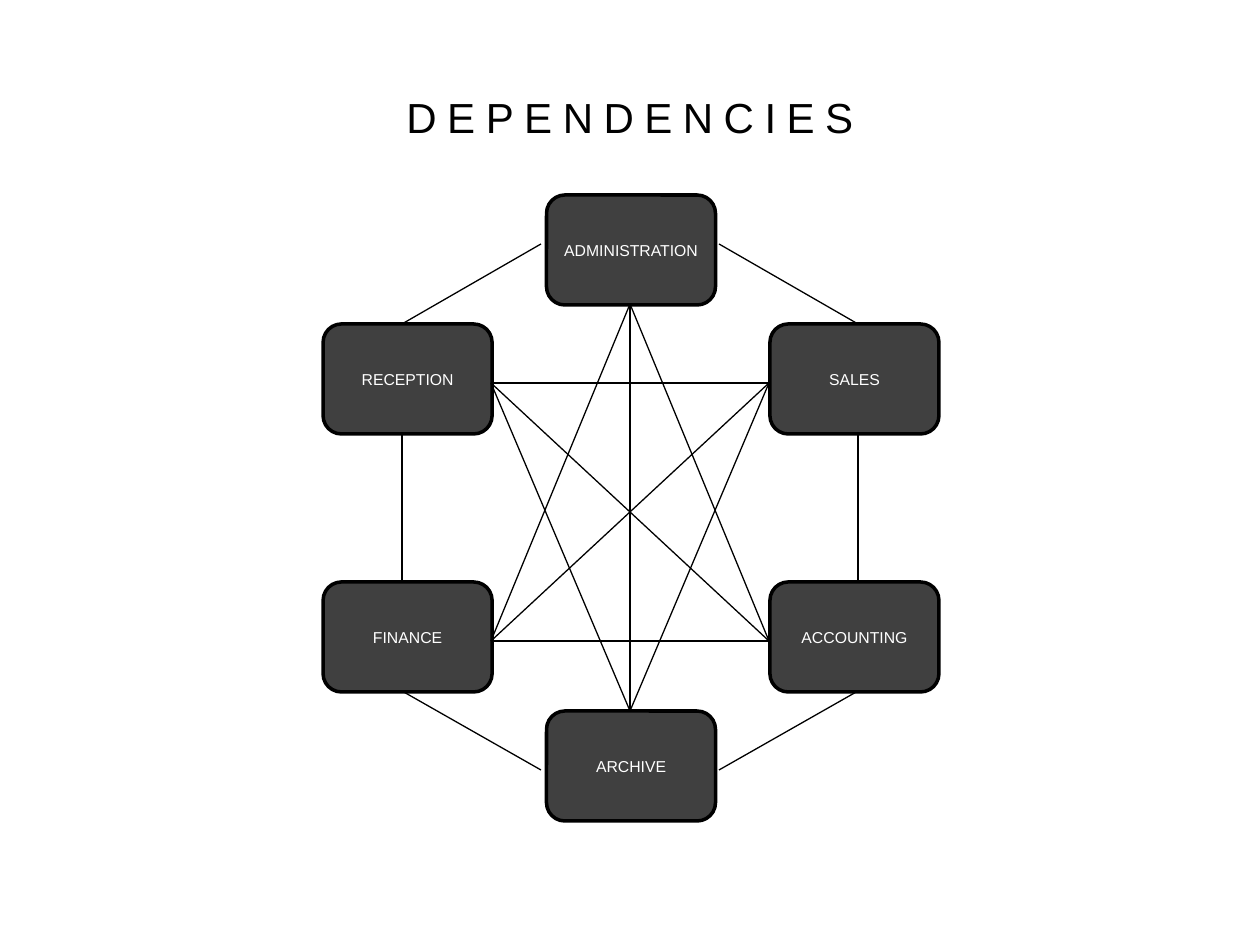
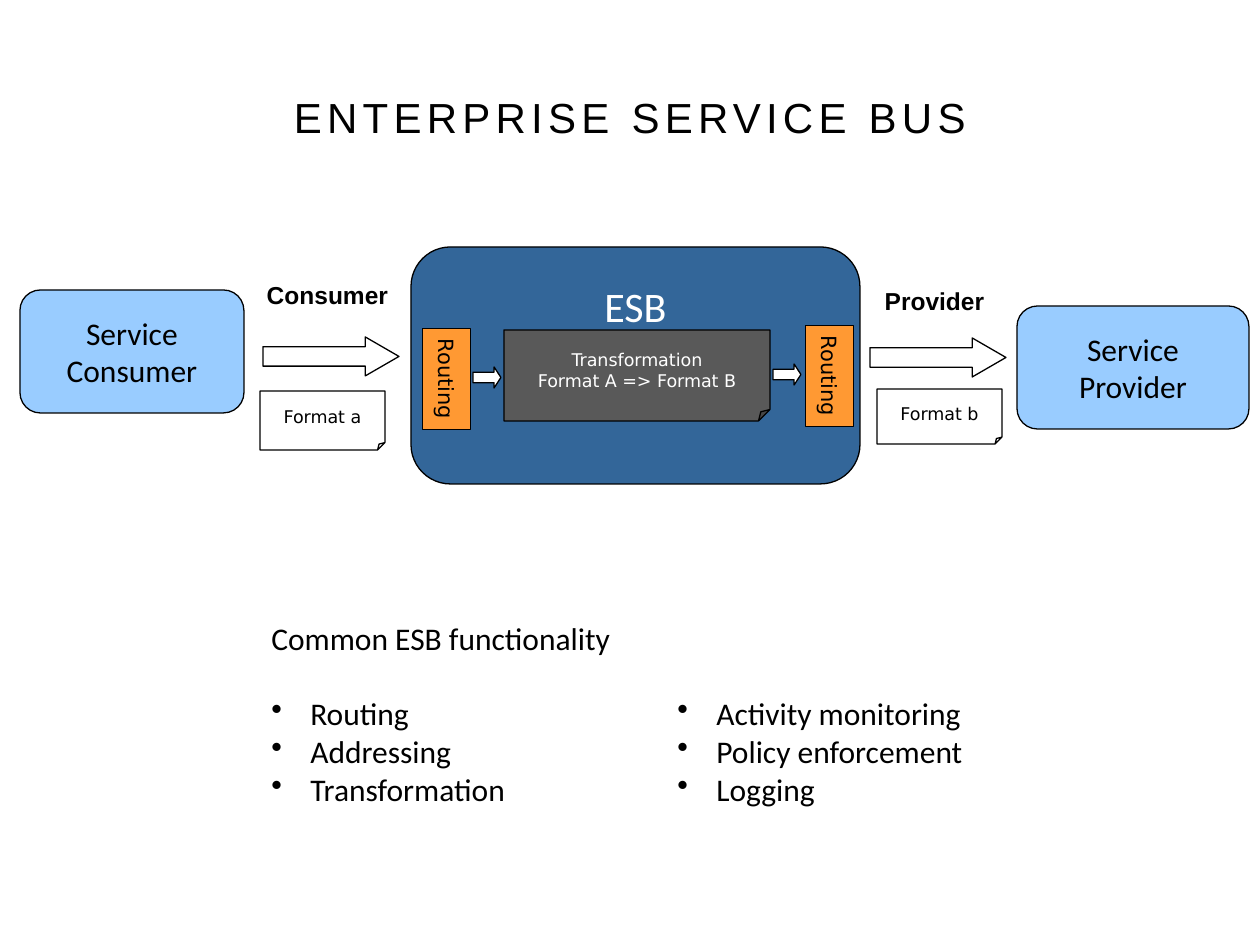
from dataclasses import dataclass
from itertools import combinations
from math import cos, pi, sin

from lxml import etree
from pptx import Presentation, util as u
from pptx.dml.color import RGBColor
from pptx.enum import shapes, text
from pptx.oxml.ns import qn

# ---- Content ----
DEPARTMENTS = ["ADMINISTRATION", "SALES", "ACCOUNTING", "ARCHIVE", "FINANCE", "RECEPTION"]

# Frames are left, top, width, height in px.
SERVICES = [("Service Consumer", (20, 290, 224, 123)), ("Service Provider", (1017, 306, 232, 123))]
MESSAGES = [("Format a", (260, 391, 125, 59)), ("Format b", (877, 389, 125, 55))]
ROLES = [("Consumer", (242, 274, 171, 42)), ("Provider", (849, 280, 171, 42))]
MESSAGE_ARROWS = [(263, 337, 136, 39), (870, 338, 136, 39)]
BUS = ("ESB", (411, 247, 449, 237))
TRANSFORMATION = ("Transformation\nFormat A => Format B", (504, 330, 266, 91))
ROUTERS = [("Routing", (396, 355, 101, 48)), ("Routing", (779, 352, 101, 48))]
ROUTING_ARROWS = [(473, 367, 28, 21), (773, 364, 28, 21)]
FUNCTIONS_HEADING = "Common ESB functionality"
FUNCTIONS = [
    ["Routing", "Addressing", "Transformation"],
    ["Activity monitoring", "Policy enforcement", "Logging"],
]


# ---- Theme ----
@dataclass(frozen=True)
class Style:
    font: str
    size: int
    color: str = "000000"
    bold: bool = False


class Theme:
    black, white = "000000", "FFFFFF"
    department, service, bus = "404040", "99CCFF", "336699"
    transformation, router = "595959", "FF9933"
    hairline, department_line = 0.75, 2
    title = Style("Arial", 24)
    department_text = Style("Arial", 9, white)
    service_text = Style("Calibri", 18)
    bus_text = Style("Calibri", 24, white)
    role_text = Style("Arial", 14, bold=True)
    message_text = Style("DejaVu Sans", 10)
    transformation_text = Style("DejaVu Sans", 10, white)
    router_text = Style("DejaVu Sans", 12)


SLIDE_SIZE = (1260, 945)
TITLE_FRAME = (63, 38, 1134, 157)
KIND = shapes.MSO_SHAPE


def px(length):
    return u.Emu(round(length * 914400 / 126))


def rgb(color):
    return RGBColor.from_string(color)


def write(shape, words, style, align=text.PP_ALIGN.CENTER,
          anchor=text.MSO_ANCHOR.MIDDLE, wrap=True):
    frame = shape.text_frame
    frame.word_wrap = wrap
    frame.vertical_anchor = anchor
    frame.text = words
    for paragraph in frame.paragraphs:
        paragraph.alignment = align
        font = paragraph.font
        font.name, font.size, font.bold = style.font, u.Pt(style.size), style.bold
        font.color.rgb = rgb(style.color)
    return frame


def add_block(slide, kind, frame, fill=None, line_width=Theme.hairline):
    block = slide.shapes.add_shape(kind, *map(px, frame))
    block.shadow.inherit = False
    if fill:
        block.fill.solid()
        block.fill.fore_color.rgb = rgb(fill)
    else:
        block.fill.background()
    block.line.color.rgb = rgb(Theme.black)
    block.line.width = u.Pt(line_width)
    return block


def add_label(slide, frame, words, style, **layout):
    label = slide.shapes.add_textbox(*map(px, frame))
    return write(label, words, style, **layout)


def add_arrow(slide, frame, head):
    arrow = add_block(slide, KIND.RIGHT_ARROW, frame, Theme.white)
    arrow.adjustments[1] = head


def add_note(slide, frame, words, style, fill=None):
    """Add a sheet whose folded corner is an eighth of its short side."""
    note = add_block(slide, KIND.FOLDED_CORNER, frame, fill)
    guides = note._element.spPr.find(qn("a:prstGeom")).find(qn("a:avLst"))
    etree.SubElement(guides, qn("a:gd"), name="adj", fmla="val 12500")
    write(note, words, style, wrap=False)


def add_link(slide, start, end):
    link = slide.shapes.add_connector(
        shapes.MSO_CONNECTOR.STRAIGHT, *map(px, (*start, *end)))
    link.line.color.rgb = rgb(Theme.black)
    link.line.width = u.Pt(Theme.hairline)
    etree.SubElement(link._element.spPr, qn("a:effectLst"))


def add_bullets(frame, indent):
    for paragraph in frame.paragraphs:
        properties = paragraph._p.get_or_add_pPr()
        properties.set("marL", str(px(indent)))
        properties.set("indent", str(-px(indent)))
        bullet = etree.Element(qn("a:buChar"), char="•")
        properties.find(qn("a:defRPr")).addprevious(bullet)


def add_titled_slide(deck, title, spacing):
    """Add a blank slide with a centred title, its letters spaced by points."""
    slide = deck.slides.add_slide(deck.slide_layouts[6])
    frame = add_label(slide, TITLE_FRAME, title, Theme.title)
    frame.paragraphs[0].runs[0]._r.get_or_add_rPr().set("spc", str(spacing * 100))
    return slide


def build_dependencies(deck):
    slide = add_titled_slide(deck, "DEPENDENCIES", 6)
    center_x, center_y, radius = 631, 508, 258
    width, height = 169, 110
    count = len(DEPARTMENTS)
    for i, department in enumerate(DEPARTMENTS):
        angle = 2 * pi * i / count
        x = center_x + radius * sin(angle)
        y = center_y - radius * cos(angle)
        box = add_block(slide, KIND.ROUNDED_RECTANGLE,
                        (x - width / 2, y - height / 2, width, height),
                        Theme.department, Theme.department_line)
        frame = write(box, department, Theme.department_text)
        frame.margin_left = frame.margin_right = px(5)

    # Departments that are not neighbours meet across the ring.
    axis, reach = 630, 139
    left, right = axis - reach, axis + reach
    inner = [(axis, 304), (right, 383), (right, 641), (axis, 711), (left, 641), (left, 383)]
    for a, b in combinations(range(count), 2):
        if b - a not in (1, count - 1):
            add_link(slide, inner[a], inner[b])

    # Neighbours meet along the rim, mirrored about the axis.
    for side in (-1, 1):
        near, far = axis + side * 89, axis + side * 228
        add_link(slide, (near, 244), (far, 324))
        add_link(slide, (far, 433), (far, 582))
        add_link(slide, (near, 770), (far, 691))

    # The two horizontal spans already belong to the inner links.


def build_service_bus(deck):
    slide = add_titled_slide(deck, "ENTERPRISE SERVICE BUS", 3)
    for service, frame in SERVICES:
        box = add_block(slide, KIND.ROUNDED_RECTANGLE, frame, Theme.service)
        write(box, service, Theme.service_text)
    for message, frame in MESSAGES:
        add_note(slide, frame, message, Theme.message_text)
    for role, frame in ROLES:
        add_label(slide, frame, role, Theme.role_text)
    for frame in MESSAGE_ARROWS:
        add_arrow(slide, frame, 0.865)

    name, frame = BUS
    bus = add_block(slide, KIND.ROUNDED_RECTANGLE, frame, Theme.bus)
    write(bus, name, Theme.bus_text, anchor=text.MSO_ANCHOR.TOP).margin_top = px(22)
    steps, frame = TRANSFORMATION
    add_note(slide, frame, steps, Theme.transformation_text, Theme.transformation)
    for router, frame in ROUTERS:
        box = add_block(slide, KIND.RECTANGLE, frame, Theme.router)
        box.rotation = 90
        write(box, router, Theme.router_text, wrap=False)
    for frame in ROUTING_ARROWS:
        add_arrow(slide, frame, 0.326)

    left, top, column_step = 259, 613, 406
    listing = dict(align=text.PP_ALIGN.LEFT, anchor=text.MSO_ANCHOR.TOP)
    add_label(slide, (left, top, 368, 50), FUNCTIONS_HEADING, Theme.service_text, **listing)
    for i, functions in enumerate(FUNCTIONS):
        frame = add_label(slide, (left + i * column_step, top + 75, 340, 128),
                          "\n".join(functions), Theme.service_text, **listing)
        add_bullets(frame, 39)


def main():
    deck = Presentation()
    deck.slide_width, deck.slide_height = map(px, SLIDE_SIZE)
    build_dependencies(deck)
    build_service_bus(deck)
    deck.save("out.pptx")


if __name__ == "__main__":
    main()
